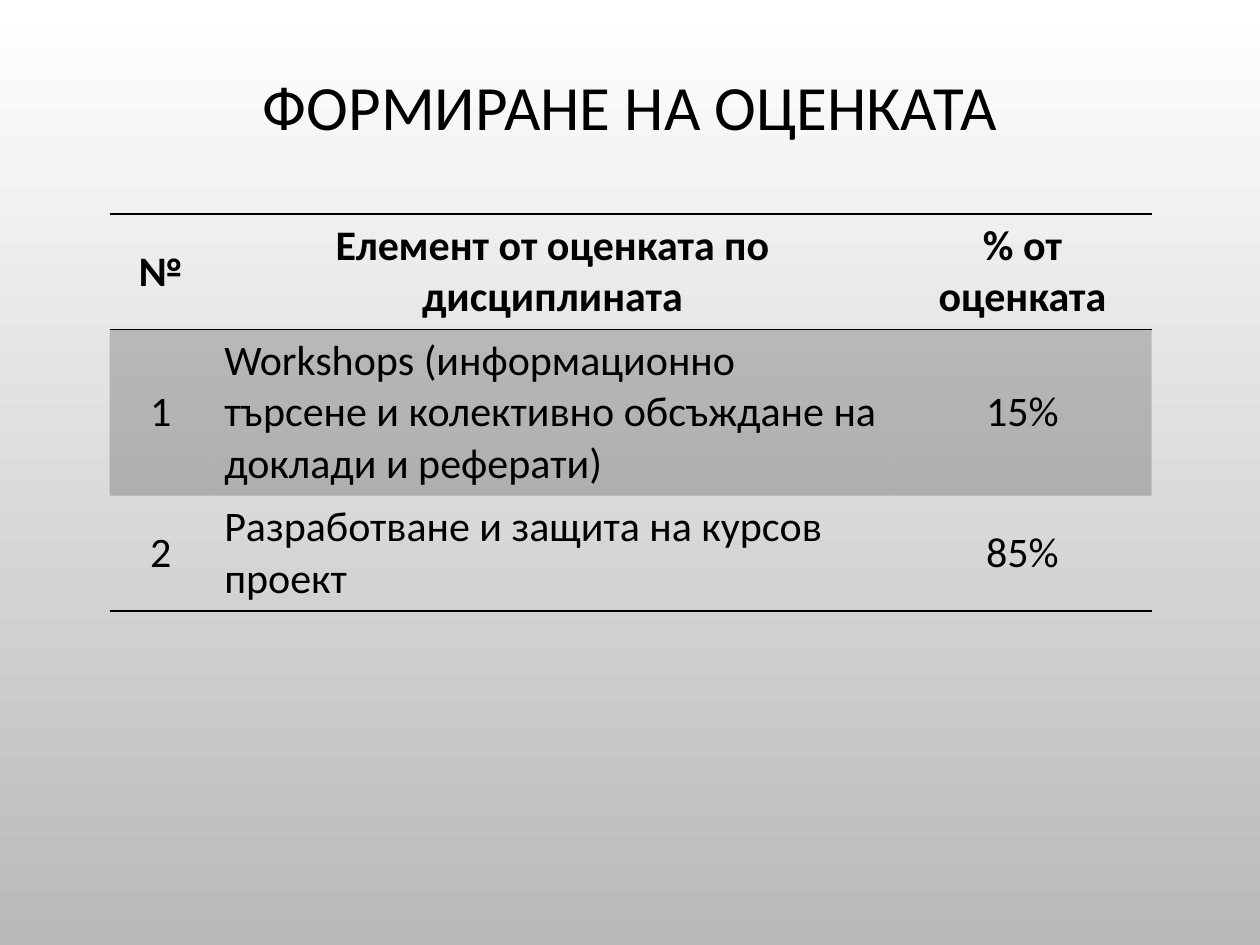
from lxml.etree import SubElement
from pptx import Presentation
from pptx.dml.color import RGBColor
from pptx.enum.text import MSO_ANCHOR, PP_ALIGN
from pptx.oxml.ns import qn
from pptx.util import Inches, Pt

TITLE = "ФОРМИРАНЕ НА ОЦЕНКАТА"
ROWS = [
    ("№", "Елемент от оценката по дисциплината", "% от оценката"),
    ("1", "Workshops (информационно търсене и колективно обсъждане на "
          "доклади и реферати)", "15%"),
    ("2", "Разработване и защита на курсов проект", "85%"),
]
WIDTHS = (0.81, 5.41, 2.05)
ROW_H = 0.41
THEME = {
    "font": "Calibri", "title": 36, "body": 24, "rule": 1,
    "ink": "000000", "top": "FFFFFF", "base": "B9B9B9", "band": 20,
}


def style(par, size, bold=False):
    for run in par.runs:
        font = run.font
        font.name, font.size, font.bold = THEME["font"], Pt(size), bold
        font.color.rgb = RGBColor.from_string(THEME["ink"])


def set_rules(cell, sides):
    """Draw the given sides of a cell and clear the others."""
    props = cell._tc.get_or_add_tcPr()
    for side in "LRTB":
        line = SubElement(props, qn(f"a:ln{side}"))
        if side in sides:
            line.set("w", str(Pt(THEME["rule"])))
            fill = SubElement(line, qn("a:solidFill"))
            SubElement(fill, qn("a:srgbClr"), val=THEME["ink"])
        else:
            SubElement(line, qn("a:noFill"))


def set_fill(cell, band):
    if not band:
        cell.fill.background()
        return
    cell.fill.solid()
    cell.fill.fore_color.rgb = RGBColor.from_string(THEME["ink"])
    tint = cell._tc.tcPr.find(qn("a:solidFill"))[0]
    SubElement(tint, qn("a:alpha"), val=str(THEME["band"] * 1000))


def add_title(slide):
    title = slide.shapes.title
    title.left, title.top = Inches(0.75), Inches(0.36)
    title.width, title.height = Inches(8.5), Inches(1.03)
    frame = title.text_frame
    frame.text = TITLE
    frame.vertical_anchor = MSO_ANCHOR.MIDDLE
    par = frame.paragraphs[0]
    par.alignment, par.line_spacing = PP_ALIGN.CENTER, 0.9
    style(par, THEME["title"])


def add_grades(slide):
    table = slide.shapes.add_table(
        len(ROWS), len(WIDTHS), Inches(0.87), Inches(1.7),
        Inches(sum(WIDTHS)), Inches(ROW_H * len(ROWS))).table
    for col, width in zip(table.columns, WIDTHS):
        col.width = Inches(width)
    sides = {0: "TB", 1: "T", len(ROWS) - 1: "B"}
    for r, row in enumerate(ROWS):
        for c, text in enumerate(row):
            cell = table.cell(r, c)
            cell.text_frame.text = text
            cell.vertical_anchor = MSO_ANCHOR.TOP if c == 1 else MSO_ANCHOR.MIDDLE
            par = cell.text_frame.paragraphs[0]
            left = r > 0 and c == 1
            par.alignment = PP_ALIGN.LEFT if left else PP_ALIGN.CENTER
            style(par, THEME["body"], bold=r == 0)
            set_rules(cell, sides.get(r, ""))
            set_fill(cell, band=r % 2 == 1)


def main():
    deck = Presentation()
    deck.slide_width, deck.slide_height = Inches(10), Inches(7.5)
    slide = deck.slides.add_slide(deck.slide_layouts[5])
    back = slide.background.fill
    back.gradient()
    back.gradient_angle = 270
    for stop, tone in zip(back.gradient_stops, ("top", "base")):
        stop.color.rgb = RGBColor.from_string(THEME[tone])
    add_title(slide)
    add_grades(slide)
    deck.save("out.pptx")


if __name__ == "__main__":
    main()
